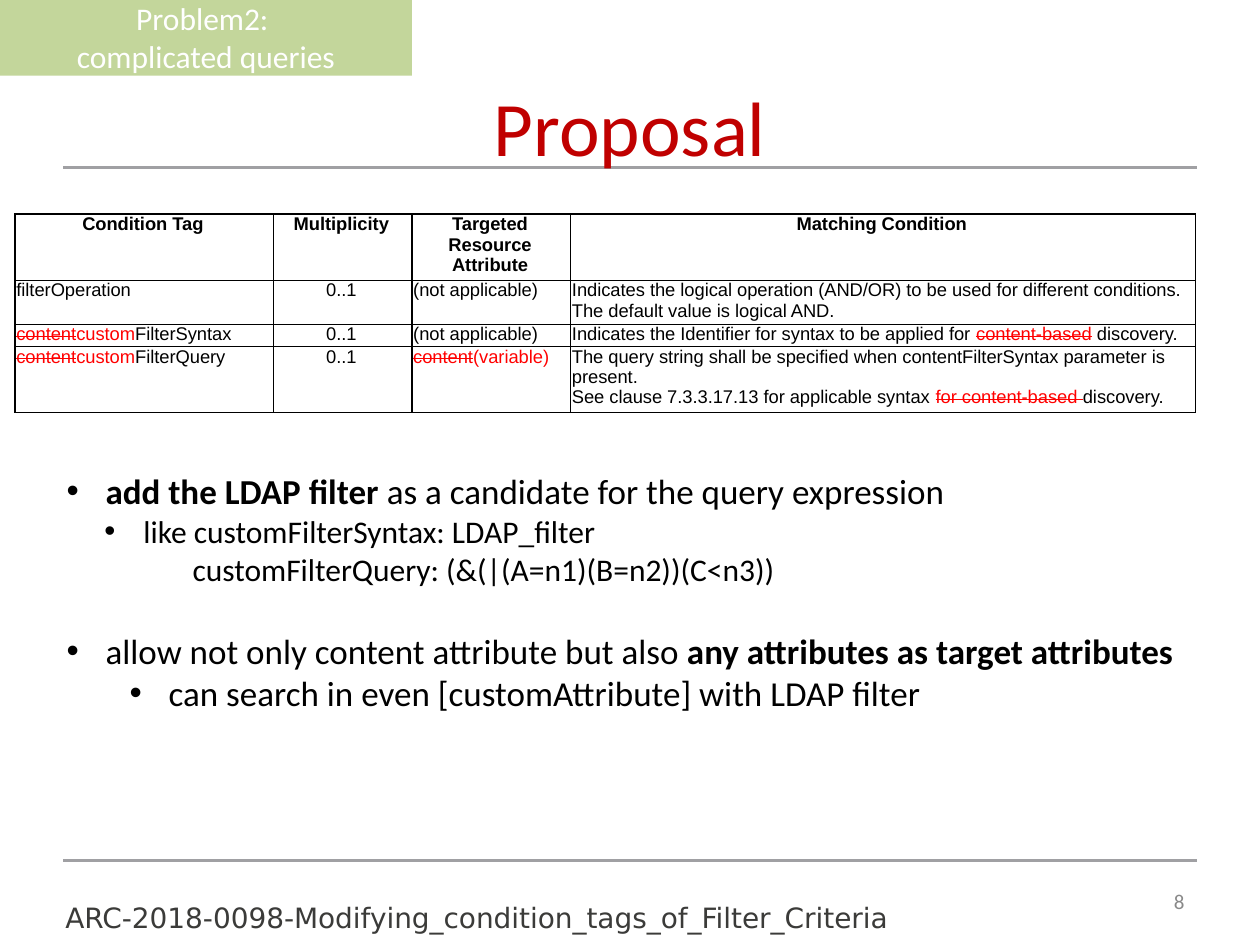
from dataclasses import dataclass

from lxml.etree import SubElement
from pptx import Presentation
from pptx.dml.color import RGBColor
from pptx.enum.shapes import MSO_CONNECTOR, MSO_SHAPE
from pptx.enum.text import MSO_ANCHOR, PP_ALIGN
from pptx.oxml.ns import qn
from pptx.util import Inches, Pt


@dataclass(frozen=True)
class Theme:
    body_font: str = "Calibri"
    table_font: str = "Arial"
    footer_font: str = "DejaVu Sans"
    black: str = "000000"
    white: str = "FFFFFF"
    title: str = "C00000"
    change: str = "FF0000"
    banner: str = "C3D69B"
    rule: str = "A0A0A3"
    footer: str = "3B3B39"
    number: str = "898989"
    title_size: float = 44
    point_size: float = 20
    detail_size: float = 18
    footer_size: float = 16
    number_size: float = 12
    table_size: float = 10.5


THEME = Theme()


def write(paragraph, text, font=THEME.body_font, size=THEME.point_size,
          color=THEME.black, bold=False, strike=False):
    run = paragraph.add_run()
    run.text = text
    run.font.name = font
    run.font.size = Pt(size)
    run.font.bold = bold
    run.font.color.rgb = RGBColor.from_string(color)
    if strike:
        run._r.get_or_add_rPr().set("strike", "sngStrike")


def set_indent(paragraph, left, bullet):
    properties = paragraph._p.get_or_add_pPr()
    properties.set("marL", str(Inches(left)))
    properties.set("indent", str(Inches(-0.31 if bullet else 0)))
    if bullet:
        SubElement(properties, qn("a:buFont"), typeface="Arial")
        SubElement(properties, qn("a:buChar"), char="•")
    else:
        SubElement(properties, qn("a:buNone"))


def set_borders(cell, color, width):
    properties = cell._tc.get_or_add_tcPr()
    for side in ("a:lnL", "a:lnR", "a:lnT", "a:lnB"):
        border = SubElement(properties, qn(side), w=str(Pt(width)))
        fill = SubElement(border, qn("a:solidFill"))
        SubElement(fill, qn("a:srgbClr"), val=color)


class SlideBuilder:
    def __init__(self, slide, theme):
        self.slide = slide
        self.theme = theme

    def add_rule(self, y):
        rule = self.slide.shapes.add_connector(
            MSO_CONNECTOR.STRAIGHT, Inches(0.5), Inches(y), Inches(9.5), Inches(y))
        rule.line.color.rgb = RGBColor.from_string(self.theme.rule)
        rule.line.width = Pt(1.75)
        SubElement(rule._element.spPr, qn("a:effectLst"))

    def add_label(self, box, text, align=PP_ALIGN.LEFT, anchor=MSO_ANCHOR.TOP, **style):
        frame = self.slide.shapes.add_textbox(*map(Inches, box)).text_frame
        frame.word_wrap = True
        frame.vertical_anchor = anchor
        frame.paragraphs[0].alignment = align
        write(frame.paragraphs[0], text, **style)

    def add_banner(self, box, lines):
        banner = self.slide.shapes.add_shape(MSO_SHAPE.RECTANGLE, *map(Inches, box))
        banner.shadow.inherit = False
        banner.fill.solid()
        banner.fill.fore_color.rgb = RGBColor.from_string(self.theme.banner)
        banner.line.fill.background()
        frame = banner.text_frame
        frame.word_wrap = True
        frame.vertical_anchor = MSO_ANCHOR.MIDDLE
        for index, line in enumerate(lines):
            paragraph = frame.add_paragraph() if index else frame.paragraphs[0]
            paragraph.alignment = PP_ALIGN.CENTER
            write(paragraph, line, size=self.theme.detail_size, color=self.theme.white)

    def add_points(self, box, points):
        frame = self.slide.shapes.add_textbox(*map(Inches, box)).text_frame
        frame.word_wrap = True
        for index, (left, bullet, gap, size, parts) in enumerate(points):
            paragraph = frame.add_paragraph() if index else frame.paragraphs[0]
            if gap:
                paragraph.space_before = Pt(gap)
            set_indent(paragraph, left, bullet)
            for text, bold in parts:
                write(paragraph, text, size=size, bold=bold)

    def add_grid(self, left, top, widths, heights, rows):
        table = self.slide.shapes.add_table(
            len(rows), len(widths), Inches(left), Inches(top),
            Inches(sum(widths)), Inches(sum(heights))).table
        table.first_row = table.horz_banding = False
        for column, width in zip(table.columns, widths):
            column.width = Inches(width)
        for row, height in zip(table.rows, heights):
            row.height = Inches(height)
        for r, row in enumerate(rows):
            for c, lines in enumerate(row):
                centered = r == 0 or c == 1
                self.fill_cell(table.cell(r, c), lines, centered, bold=r == 0)

    def fill_cell(self, cell, lines, centered, bold):
        cell.margin_left, cell.margin_right = Inches(0.01), Inches(0.03)
        cell.margin_top = cell.margin_bottom = 0
        set_borders(cell, self.theme.black, 1)
        cell.fill.background()
        for index, parts in enumerate(lines):
            frame = cell.text_frame
            paragraph = frame.add_paragraph() if index else frame.paragraphs[0]
            paragraph.alignment = PP_ALIGN.CENTER if centered else PP_ALIGN.LEFT
            for text, change in parts:
                write(paragraph, text, font=self.theme.table_font,
                      size=self.theme.table_size, bold=bold, strike=change == "removed",
                      color=self.theme.change if change else self.theme.black)


def line(*parts):
    """Pair each plain string with no change mark; keep marked parts."""
    return [(part, None) if isinstance(part, str) else part for part in parts]


def removed(text):
    return text, "removed"


def added(text):
    return text, "added"


def main():
    presentation = Presentation()
    presentation.slide_width, presentation.slide_height = Inches(10), Inches(7.5)
    slide = presentation.slides.add_slide(presentation.slide_layouts[6])
    builder = SlideBuilder(slide, THEME)

    # Footer, rules and title
    builder.add_label((0.42, 7.1, 8.75, 0.37),
                      "ARC-2018-0098-Modifying_condition_tags_of_Filter_Criteria",
                      font=THEME.footer_font, size=THEME.footer_size, color=THEME.footer)
    for y in (6.83, 1.33):
        builder.add_rule(y)
    builder.add_label((7.17, 6.95, 2.33, 0.4), "8", PP_ALIGN.RIGHT, MSO_ANCHOR.MIDDLE,
                      size=THEME.number_size, color=THEME.number)
    builder.add_label((0.5, 0.58, 9, 1.25), "Proposal", PP_ALIGN.CENTER,
                      size=THEME.title_size, color=THEME.title)

    # Condition tags with their changes
    headings = ("Condition Tag", "Multiplicity", "Targeted Resource Attribute",
                "Matching Condition")
    once, not_applicable = [line("0..1")], [line("(not applicable)")]
    renamed = (removed("content"), added("custom"))
    conditions = [
        [[line(heading)] for heading in headings],
        [[line("filterOperation")], once, not_applicable,
         [line("Indicates the logical operation (AND/OR) to be used for different "
               "conditions. The default value is logical AND.")]],
        [[line(*renamed, "FilterSyntax")], once, not_applicable,
         [line("Indicates the Identifier for syntax to be applied for ",
               removed("content-based"), " discovery.")]],
        [[line(*renamed, "FilterQuery")], once,
         [line(removed("content"), added("(variable)"))],
         [line("The query string shall be specified when contentFilterSyntax "
               "parameter is present."),
          line("See clause 7.3.3.17.13 for applicable syntax ",
               removed("for content-based "), "discovery.")]],
    ]
    builder.add_grid(0.12, 1.7, (2.05, 1.1, 1.26, 4.96), (0.48, 0.32, 0.16, 0.48),
                     conditions)

    # Proposal points: indent, bullet, gap before, size, (text, bold) parts
    point, detail = THEME.point_size, THEME.detail_size
    builder.add_points((0.43, 3.68, 9.37, 2.05), [
        (0.31, True, 0, point, [("add the LDAP filter ", True),
                                ("as a candidate for the query expression", False)]),
        (0.61, True, 0, detail, [("like customFilterSyntax: LDAP_filter", False)]),
        (1, False, 0, detail, [("customFilterQuery: (&(|(A=n1)(B=n2))(C<n3))", False)]),
        (0.31, True, 24, point, [("allow not only content attribute but also ", False),
                                 ("any attributes as target attributes", True)]),
        (0.81, True, 0, point,
         [("can search in even [customAttribute] with LDAP filter", False)]),
    ])

    # Problem banner
    builder.add_banner((0, -0.02, 3.27, 0.62), ("Problem2: ", "complicated queries"))

    presentation.save("out.pptx")


if __name__ == "__main__":
    main()
